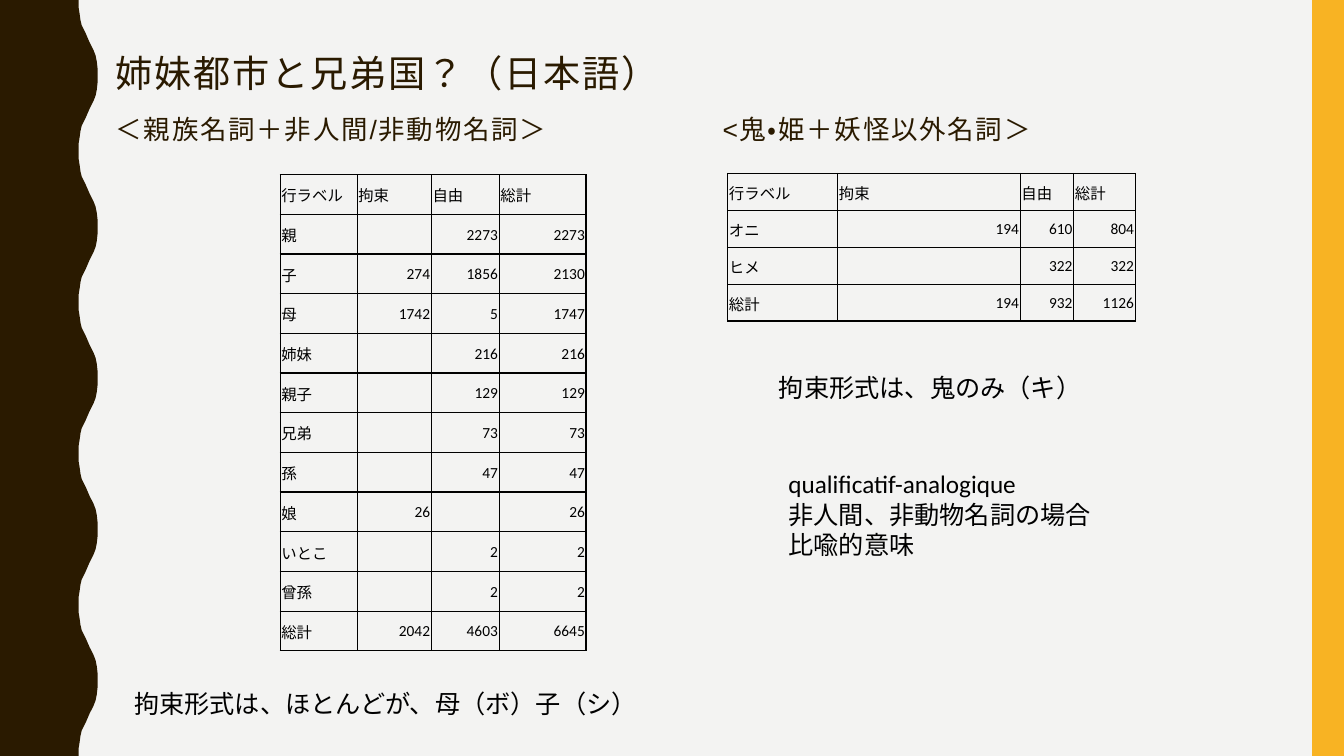
from lxml import etree
from pptx import Presentation
from pptx import util as u
from pptx.dml.color import RGBColor
from pptx.enum import lang, shapes, text
from pptx.oxml import ns

BROWN = RGBColor(0x2A, 0x1A, 0x00)
GOLD = RGBColor(0xF8, 0xB3, 0x23)
PALE = RGBColor(0xF3, 0xF3, 0xF2)
BLACK = RGBColor(0, 0, 0)
WIDE, HIGH = 33.87, 19.05

# Half a wave of the left edge, and the length of a whole wave
CURVE = [(1.98, 0), (1.98, .18), (2.01, .36), (2.03, .51), (2.06, .64),
         (2.11, .74), (2.16, .84), (2.26, 1.07), (2.31, 1.17), (2.36, 1.27),
         (2.41, 1.4), (2.44, 1.55), (2.46, 1.73), (2.46, 1.9)]
WAVES = 5
STEP = HIGH / WAVES

HEAD = ["行ラベル", "拘束", "自由", "総計"]
KIN = [HEAD,
       ["親", "", 2273, 2273],
       ["子", 274, 1856, 2130],
       ["母", 1742, 5, 1747],
       ["姉妹", "", 216, 216],
       ["親子", "", 129, 129],
       ["兄弟", "", 73, 73],
       ["孫", "", 47, 47],
       ["娘", 26, "", 26],
       ["いとこ", "", 2, 2],
       ["曾孫", "", 2, 2],
       ["総計", 2042, 4603, 6645]]
OGRE = [HEAD,
        ["オニ", 194, 610, 804],
        ["ヒメ", "", 322, 322],
        ["総計", 194, 932, 1126]]


class Deck:
    def __init__(self):
        self.file = Presentation()
        self.file.slide_width = u.Cm(WIDE)
        self.file.slide_height = u.Cm(HIGH)
        self.slide = self.file.slides.add_slide(self.file.slide_layouts[6])
        fill = self.slide.background.fill
        fill.solid()
        fill.fore_color.rgb = PALE

    def paint(self, shape, color):
        shape.shadow.inherit = False
        shape.fill.solid()
        shape.fill.fore_color.rgb = color
        shape.line.fill.background()

    def bar(self, x, y, w, h, color):
        kind = shapes.MSO_SHAPE.RECTANGLE
        box = [u.Cm(v) for v in (x, y, w, h)]
        self.paint(self.slide.shapes.add_shape(kind, *box), color)

    def outline(self, dots, color):
        first, *rest = [(u.Cm(x), u.Cm(y)) for x, y in dots]
        pen = self.slide.shapes.build_freeform(*first)
        pen.add_line_segments(rest, close=True)
        self.paint(pen.convert_to_shape(), color)

    def run(self, para, words, size, font="Calibri", color=BLACK):
        run = para.add_run()
        run.text = words
        run.font.size = u.Pt(size)
        run.font.name = font
        run.font.color.rgb = color
        run.font.language_id = lang.MSO_LANGUAGE_ID.JAPANESE
        return run

    def frame(self, x, y, w, h, pad=.13):
        box = [u.Cm(v) for v in (x, y, w, h)]
        frame = self.slide.shapes.add_textbox(*box).text_frame
        frame.margin_left = frame.margin_right = u.Cm(pad)
        frame.margin_top = frame.margin_bottom = u.Cm(.13)
        return frame

    def title(self, x, y, w, h, lines, tab):
        frame = self.frame(x, y, w, h)
        frame.word_wrap = True
        frame.vertical_anchor = text.MSO_ANCHOR.MIDDLE
        for i, (words, size, gap) in enumerate(lines):
            para = frame.add_paragraph() if i else frame.paragraphs[0]
            para.line_spacing = .9
            para.space_after = u.Pt(gap)
            stops = etree.SubElement(para._p.get_or_add_pPr(), ns.qn("a:tabLst"))
            etree.SubElement(stops, ns.qn("a:tab"), pos=str(u.Cm(tab)), algn="l")
            run = self.run(para, words, size, "Arial", BROWN)
            run.font._element.set("spc", "120")

    def note(self, x, y, w, h, lines, pad=.13):
        frame = self.frame(x, y, w, h, pad)
        frame.word_wrap = False
        frame.auto_size = text.MSO_AUTO_SIZE.SHAPE_TO_FIT_TEXT
        for i, words in enumerate(lines):
            para = frame.add_paragraph() if i else frame.paragraphs[0]
            self.run(para, words, 18)

    def border(self, cell):
        props = cell._tc.get_or_add_tcPr()
        for i, side in enumerate("LRTB"):
            line = etree.Element(ns.qn("a:ln" + side), w=str(u.Pt(1)))
            fill = etree.SubElement(line, ns.qn("a:solidFill"))
            etree.SubElement(fill, ns.qn("a:srgbClr"), val=str(BLACK))
            props.insert(i, line)

    def table(self, x, y, cols, step, rows):
        box = [u.Cm(v) for v in (x, y, sum(cols), step * len(rows))]
        grid = self.slide.shapes.add_table(len(rows), len(cols), *box).table
        grid.first_row = grid.horz_banding = False
        for col, wide in zip(grid.columns, cols):
            col.width = u.Cm(wide)
        for r, row in enumerate(rows):
            grid.rows[r].height = u.Cm(step)
            for c, value in enumerate(row):
                self.cell(grid.cell(r, c), value)

    def cell(self, cell, value):
        cell.fill.background()
        self.border(cell)
        cell.vertical_anchor = text.MSO_ANCHOR.MIDDLE
        cell.margin_left = cell.margin_right = cell.margin_top = u.Cm(.03)
        cell.margin_bottom = 0
        para = cell.text_frame.paragraphs[0]
        if isinstance(value, int):
            para.alignment = text.PP_ALIGN.RIGHT
        if value != "":
            self.run(para, str(value), 11)


def main():
    deck = Deck()

    # Wavy left edge and right bar
    wave = CURVE + [(x, STEP - y) for x, y in reversed(CURVE)]
    edge = [(x, y + n * STEP) for n in range(WAVES) for x, y in wave]
    deck.outline([(0, 0), *edge, (0, HIGH)], BROWN)
    deck.bar(33.07, 0, .8, HIGH, GOLD)

    # Title with the two headings
    deck.title(2.79, .46, 28.27, 4.14, [
        ("姉妹都市と兄弟国？（日本語）", 26.6, 15),
        ("＜親族名詞＋非人間/非動物名詞＞\t<鬼・姫＋妖怪以外名詞＞", 18.9, 0),
    ], 15.29)

    # Kinship nouns
    deck.table(7.06, 4.4, [1.94, 1.87, 1.71, 2.19], 1, KIN)
    deck.note(3.25, 17.22, 13.08, 1.02, ["拘束形式は、ほとんどが、母（ボ）子（シ）"])

    # Ogre and princess nouns
    deck.table(18.34, 4.37, [2.77, 4.6, 1.35, 1.55], .93, OGRE)
    deck.note(19.38, 9.25, 8.2, 1.02, ["拘束形式は、鬼のみ（キ）"], .25)
    deck.note(19.74, 11.68, 7.95, 2.57, [
        "qualificatif-analogique", "非人間、非動物名詞の場合", "比喩的意味"])

    deck.file.save("out.pptx")


if __name__ == "__main__":
    main()
